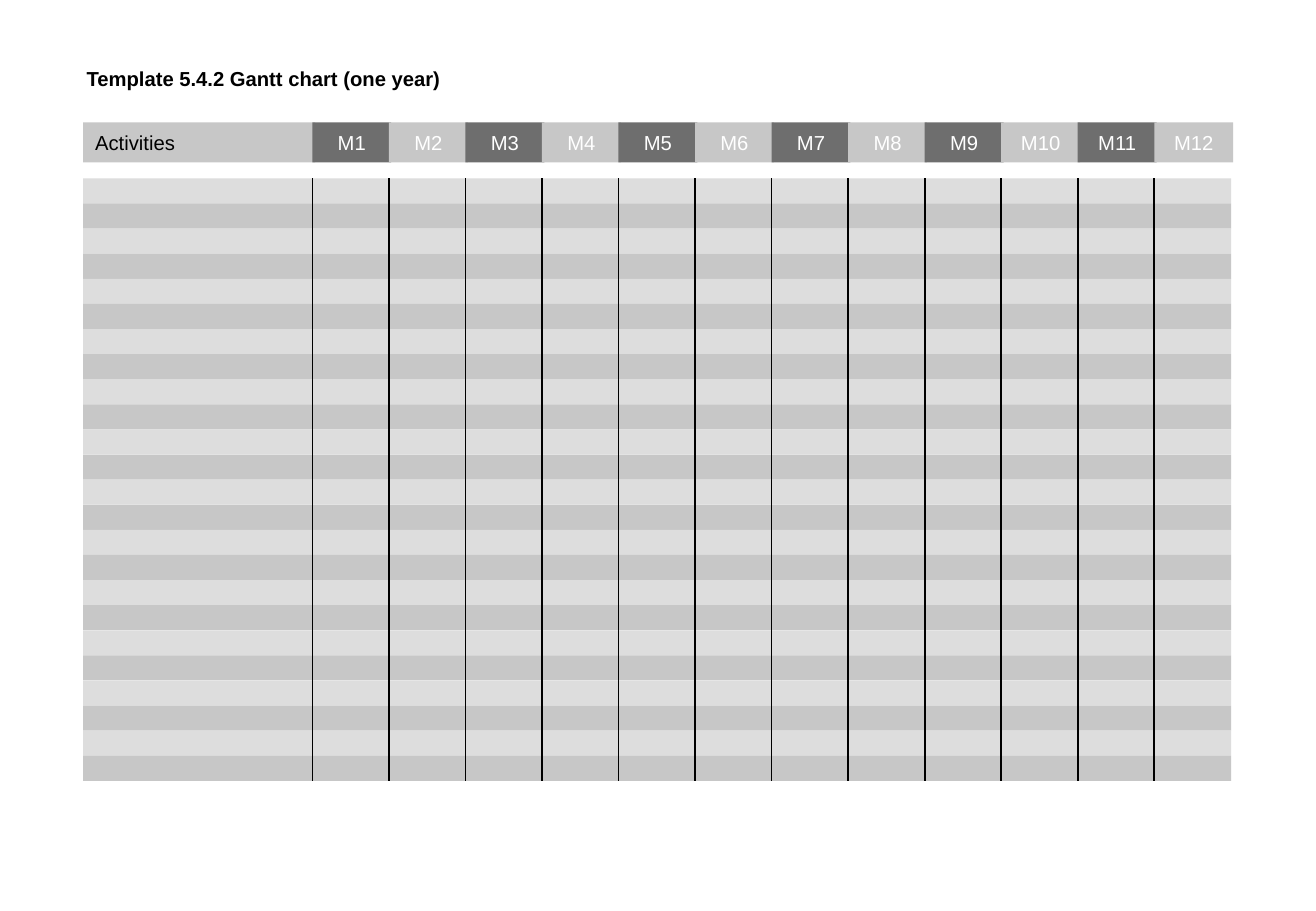
"""Build a one-year Gantt chart template slide."""
from dataclasses import dataclass

from lxml import etree
from pptx import Presentation
from pptx import util as u
from pptx.dml.color import RGBColor
from pptx.enum import shapes, text
from pptx.oxml import ns


@dataclass(frozen=True)
class Theme:
    """Colours, font and sizes of the slide."""
    font: str = "Arial"
    size: int = 12
    line_width: int = 1
    black: str = "000000"
    white: str = "FFFFFF"
    dark: str = "6E6E6E"
    middle: str = "C7C7C7"
    light: str = "DDDDDD"


THEME = Theme()
LEFT, WIDTH = 1.74, 24
HEADER_TOP, HEADER_HEIGHT = 2.56, 0.84
MONTH_LEFT, MONTH_STEP, MONTH_WIDTH = 6.53, 1.6, 1.65
MONTHS, ROWS = 12, 24
BODY_TOP, BODY_HEIGHT = 3.73, 12.6


def set_values(target, values):
    """Set each attribute named in a dict of format values."""
    for name, value in values.items():
        setattr(target, name, value)


def write_text(shape, content, color, alignment=text.PP_ALIGN.LEFT, bold=False):
    """Write one formatted paragraph into a shape."""
    paragraph = shape.text_frame.paragraphs[0]
    paragraph.alignment = alignment
    run = paragraph.add_run()
    run.text = content
    set_values(run.font, {"name": THEME.font, "size": u.Pt(THEME.size), "bold": bold})
    run.font.color.rgb = RGBColor.from_string(color)


def add_bar(slide, left, top, width, height, fill):
    """Add a filled rectangle without an outline."""
    shape = slide.shapes.add_shape(
        shapes.MSO_SHAPE.RECTANGLE, u.Cm(left), u.Cm(top), u.Cm(width), u.Cm(height))
    shape.shadow.inherit = False
    shape.fill.solid()
    shape.fill.fore_color.rgb = RGBColor.from_string(fill)
    shape.line.fill.background()
    return shape


def add_divider(slide, x):
    """Add a vertical line over the full height of the chart body."""
    divider = slide.shapes.add_connector(
        shapes.MSO_CONNECTOR.STRAIGHT,
        u.Cm(x), u.Cm(BODY_TOP), u.Cm(x), u.Cm(BODY_TOP + BODY_HEIGHT))
    divider.line.width = u.Pt(THEME.line_width)
    divider.line.color.rgb = RGBColor.from_string(THEME.black)
    etree.SubElement(divider._element.spPr, ns.qn("a:effectLst"))


def add_title(slide, content):
    """Add the bold slide title."""
    box = slide.shapes.add_textbox(u.Cm(1.56), u.Cm(1.27), u.Cm(7.98), u.Cm(0.77))
    set_values(box.text_frame, {
        "word_wrap": False, "auto_size": text.MSO_AUTO_SIZE.SHAPE_TO_FIT_TEXT})
    write_text(box, content, THEME.black, bold=True)


def add_header(slide):
    """Add the activities heading and the month headings."""
    activities = add_bar(slide, LEFT, HEADER_TOP, 4.85, HEADER_HEIGHT, THEME.middle)
    write_text(activities, "Activities", THEME.black)
    for month in range(MONTHS):
        fill = THEME.middle if month % 2 else THEME.dark
        heading = add_bar(slide, MONTH_LEFT + month * MONTH_STEP, HEADER_TOP,
                          MONTH_WIDTH, HEADER_HEIGHT, fill)
        write_text(heading, f"M{month + 1}", THEME.white, text.PP_ALIGN.CENTER)


def add_body(slide):
    """Add the striped activity rows and the month dividers."""
    row_height = BODY_HEIGHT / ROWS
    for row in range(ROWS):
        fill = THEME.middle if row % 2 else THEME.light
        add_bar(slide, LEFT, BODY_TOP + row * row_height, WIDTH, row_height, fill)
    for month in range(MONTHS):
        add_divider(slide, MONTH_LEFT + month * MONTH_STEP)


def main():
    """Build and save the presentation."""
    presentation = Presentation()
    set_values(presentation, {"slide_width": u.Cm(27.51), "slide_height": u.Cm(19.05)})
    slide = presentation.slides.add_slide(presentation.slide_layouts[6])
    add_header(slide)
    add_body(slide)
    add_title(slide, "Template 5.4.2 Gantt chart (one year)")
    presentation.save("out.pptx")


if __name__ == "__main__":
    main()
